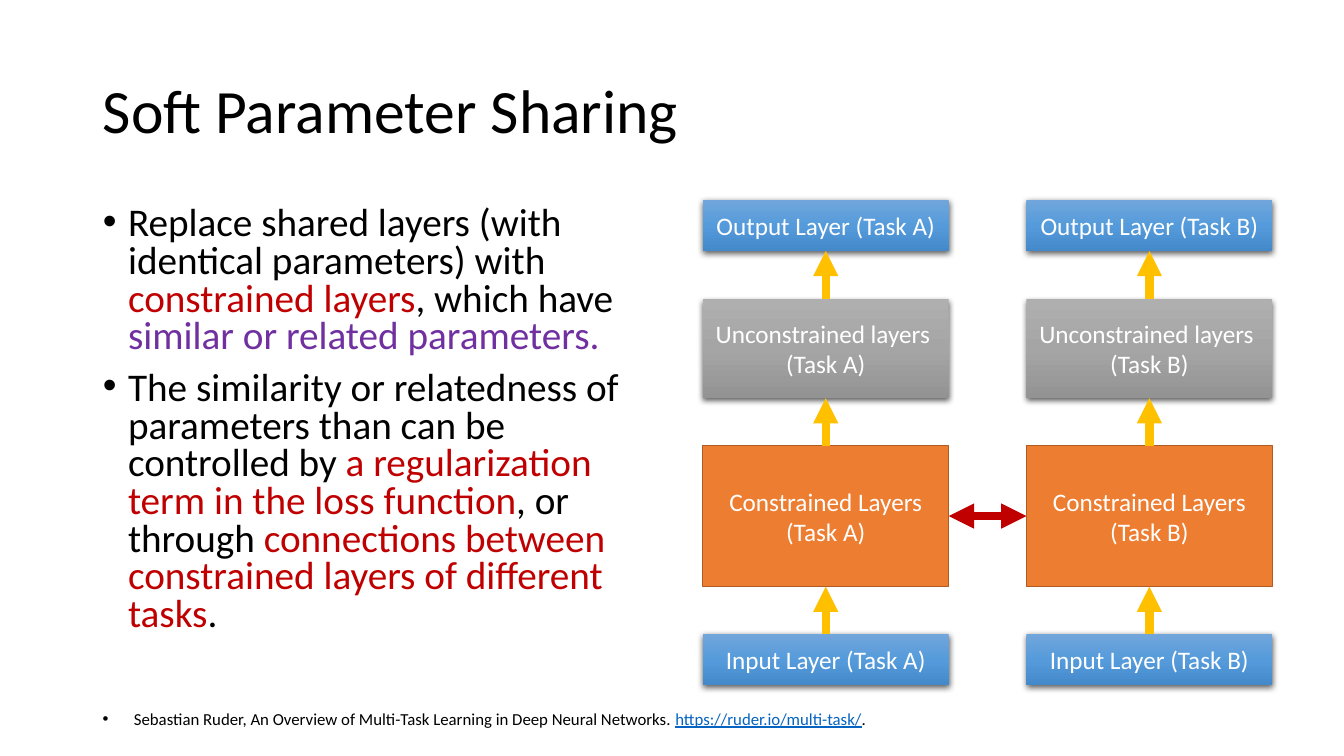
import pptx
import pptx.dml.color
import pptx.enum.shapes
import pptx.enum.text
import pptx.oxml
import pptx.oxml.ns
import pptx.util
from lxml import etree

Inches, Pt = pptx.util.Inches, pptx.util.Pt
qn = pptx.oxml.ns.qn
ALIGN = pptx.enum.text.PP_ALIGN
ANCHOR = pptx.enum.text.MSO_ANCHOR
BLACK, WHITE, RED, PURPLE = "000000", "FFFFFF", "C00000", "7030A0"
YELLOW, ORANGE, RUST, LINK = "FFC000", "ED7D31", "AF5C24", "0563C1"
BLUES = ["71A6DB", "559BDB", "448ACA"]
GREYS = ["AFAFAF", "A5A5A5", "939393"]


def rgb(value):
    return pptx.dml.color.RGBColor.from_string(value)


def add_xml(parent, tag, **attributes):
    return etree.SubElement(parent, qn(tag), {k: str(v) for k, v in attributes.items()})


class Deck:
    """Hold the style and the current slide, and add each kind of element."""

    def __init__(self, prs, font):
        self.font = font
        self.slide = prs.slides.add_slide(prs.slide_layouts[1])

    def place(self, sp, left, top, width, height):
        sp.left, sp.top = Inches(left), Inches(top)
        sp.width, sp.height = Inches(width), Inches(height)

    def format(self, r, size, color):
        r.font.name, r.font.size = self.font, Pt(size)
        r.font.color.rgb = rgb(color)

    def runs(self, p, parts, size):
        for text, color in parts:
            r = p.add_run()
            r.text = text
            self.format(r, size, color)
            if color == LINK:
                r.font.underline = True

    def bullet(self, p, indent):
        pPr = p._p.get_or_add_pPr()
        pPr.set("marL", str(Inches(indent)))
        pPr.set("indent", str(-Inches(indent)))
        add_xml(pPr, "a:buFont", typeface="Arial")
        add_xml(pPr, "a:buChar", char="•")

    def title(self, text, box):
        sp = self.slide.shapes.title
        self.place(sp, *box)
        tf = sp.text_frame
        tf.text = text
        tf.auto_size = pptx.enum.text.MSO_AUTO_SIZE.NONE
        tf.vertical_anchor = ANCHOR.MIDDLE
        p = tf.paragraphs[0]
        p.alignment, p.line_spacing = ALIGN.LEFT, 0.9
        self.format(p.runs[0], 44, BLACK)

    def body(self, items, box):
        sp = self.slide.placeholders[1]
        self.place(sp, *box)
        tf = sp.text_frame
        tf.auto_size = pptx.enum.text.MSO_AUTO_SIZE.NONE
        for i, parts in enumerate(items):
            p = tf.add_paragraph() if i else tf.paragraphs[0]
            p.line_spacing, p.space_before = 0.8, Pt(10)
            self.bullet(p, 0.25)
            self.runs(p, parts, 28)

    def note(self, parts, box):
        sp = self.slide.shapes.add_textbox(*map(Inches, box))
        tf = sp.text_frame
        tf.word_wrap = True
        p = tf.paragraphs[0]
        self.bullet(p, 0.31)
        self.runs(p, parts, 12)

    def box(self, text, box, fill, line=None):
        sp = self.slide.shapes.add_shape(
            pptx.enum.shapes.MSO_SHAPE.RECTANGLE, *map(Inches, box))
        sp.shadow.inherit = False
        if line:
            sp.fill.solid()
            sp.fill.fore_color.rgb = rgb(fill)
            sp.line.color.rgb, sp.line.width = rgb(line), Pt(1)
        else:
            sp.line.fill.background()
            self.gradient(sp, fill)
            self.drop_shadow(sp)
        tf = sp.text_frame
        tf.text = text
        tf.word_wrap = True
        tf.vertical_anchor = ANCHOR.MIDDLE
        for p in tf.paragraphs:
            p.alignment = ALIGN.CENTER
            self.format(p.runs[0], 18, WHITE)
        return sp

    def gradient(self, sp, colors):
        sp.fill.gradient()
        sp.fill.gradient_angle = 270
        stops = sp._element.spPr.find(".//" + qn("a:gsLst"))
        stops.clear()
        for i, color in enumerate(colors):
            add_xml(add_xml(stops, "a:gs", pos=i * 50000), "a:srgbClr", val=color)

    def drop_shadow(self, sp):
        effects = sp._element.spPr.find(qn("a:effectLst"))
        shadow = add_xml(effects, "a:outerShdw", blurRad=Pt(4.5), dist=Pt(1.5),
                         dir=5400000, algn="ctr", rotWithShape=0)
        add_xml(add_xml(shadow, "a:srgbClr", val=BLACK), "a:alpha", val=63000)

    def arrow(self, start, start_side, end, end_side, color, ends=("tailEnd",)):
        line = self.slide.shapes.add_connector(
            pptx.enum.shapes.MSO_CONNECTOR.STRAIGHT, 0, 0, 0, 0)
        line.begin_connect(start, start_side)
        line.end_connect(end, end_side)
        line.line.color.rgb, line.line.width = rgb(color), Pt(6)
        for name in ends:
            add_xml(line.line._get_or_add_ln(), "a:" + name, type="triangle")
        add_xml(line._element.spPr, "a:effectLst")


def main():
    prs = pptx.Presentation()
    prs.slide_width, prs.slide_height = Inches(13.33), Inches(7.5)
    deck = Deck(prs, "Calibri")
    deck.title("Soft Parameter Sharing", (0.92, 0.4, 11.5, 1.45))
    deck.body([
        [("Replace shared layers (with identical parameters) with ", BLACK),
         ("constrained layers", RED), (", which have ", BLACK),
         ("similar or related parameters.", PURPLE)],
        [("The similarity or relatedness of parameters than can be controlled by ", BLACK),
         ("a regularization term in the loss function", RED), (", or through ", BLACK),
         ("connections between constrained layers of different tasks", RED), (".", BLACK)],
    ], (0.92, 2, 5.67, 4.76))

    layers = [
        ("Input Layer ", 6.29, 0.51, BLUES, None),
        ("Constrained Layers\n", 4.42, 1.4, ORANGE, RUST),
        ("Unconstrained layers \n", 2.97, 0.98, GREYS, None),
        ("Output Layer ", 1.98, 0.51, BLUES, None),
    ]
    constrained = []
    for task, left in (("A", 6.97), ("B", 10.18)):
        stack = [deck.box(f"{name}(Task {task})", (left, top, 2.44, height), fill, line)
                 for name, top, height, fill, line in layers]
        for lower, upper in zip(stack, stack[1:]):
            deck.arrow(lower, 0, upper, 2, YELLOW)
        constrained.append(stack[1])
    deck.arrow(constrained[0], 3, constrained[1], 1, RED, ("headEnd", "tailEnd"))

    deck.note([
        ("Sebastian Ruder, An Overview of Multi-Task Learning in Deep Neural Networks. ", BLACK),
        ("https://ruder.io/multi-task/", LINK), (".", BLACK),
    ], (0.92, 6.98, 10.14, 0.3))
    prs.save("out.pptx")


if __name__ == "__main__":
    main()
